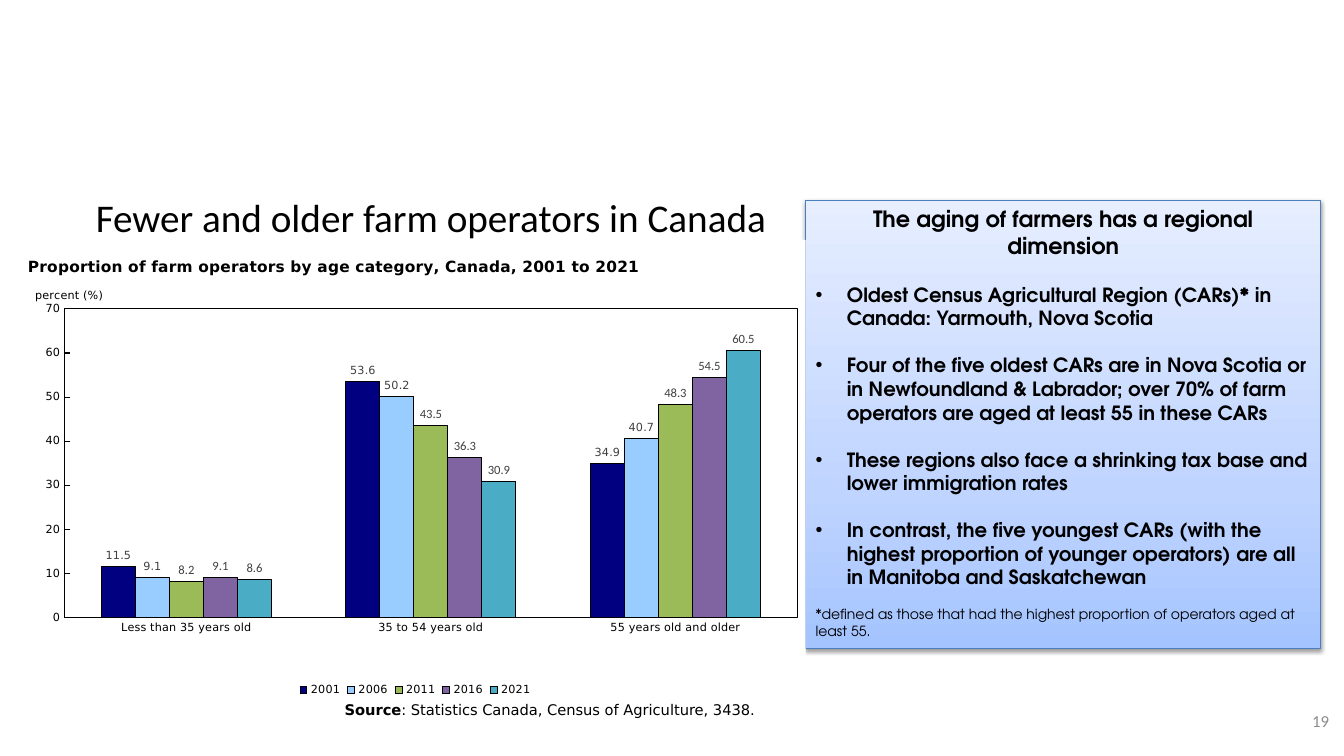
import copy
from dataclasses import dataclass

import pptx
import pptx.chart.data
import pptx.dml.color
import pptx.enum.chart
import pptx.enum.shapes
import pptx.enum.text
import pptx.oxml
import pptx.oxml.ns
import pptx.util

Inches = pptx.util.Inches
Pt = pptx.util.Pt
Align = pptx.enum.text.PP_ALIGN
Anchor = pptx.enum.text.MSO_ANCHOR
TickMark = pptx.enum.chart.XL_TICK_MARK
qn = pptx.oxml.ns.qn


@dataclass(frozen=True)
class Theme:
    text: str = "000000"
    label: str = "404040"
    number: str = "8C8C8C"
    white: str = "FFFFFF"
    panel_line: str = "4B7EBC"
    panel_stops: tuple = ((0, "A4C4FF"), (0.35, "BFD4FF"), (1, "E6EEFF"))
    body: str = "Calibri"
    chart: str = "DejaVu Sans"
    panel: str = "TeX Gyre Adventor"
    title_size: float = 28
    heading_size: float = 16
    bullet_size: float = 14
    number_size: float = 12
    chart_title_size: float = 11
    source_size: float = 10.5
    note_size: float = 10
    value_size: float = 9
    axis_size: float = 8
    line: float = 0.75


THEME = Theme()


@dataclass(frozen=True)
class Census:
    year: str
    shares: tuple
    color: str
    font: str
    size: float


AGES = ("Less than 35 years old", "35 to 54 years old", "55 years old and older")
CENSUSES = (
    Census("2001", (11.5, 53.6, 34.9), "000080", THEME.chart, THEME.axis_size),
    Census("2006", (9.1, 50.2, 40.7), "99CCFF", THEME.chart, THEME.axis_size),
    Census("2011", (8.2, 43.5, 48.3), "9BBB59", THEME.body, THEME.value_size),
    Census("2016", (9.1, 36.3, 54.5), "8064A2", THEME.body, THEME.value_size),
    Census("2021", (8.6, 30.9, 60.5), "4BACC6", THEME.body, THEME.value_size),
)
FINDINGS = (
    "Oldest Census Agricultural Region (CARs)* in Canada: Yarmouth, Nova Scotia",
    "Four of the five oldest CARs are in Nova Scotia or in Newfoundland & Labrador; "
    "over 70% of farm operators are aged at least 55 in these CARs",
    "These regions also face a shrinking tax base and lower immigration rates",
    "In contrast, the five youngest CARs (with the highest proportion of younger "
    "operators) are all in Manitoba and Saskatchewan",
)


def rgb(color: str):
    return pptx.dml.color.RGBColor.from_string(color)


def xml(markup: str):
    """Parse one element, declaring the drawing and chart namespaces."""
    head, rest = markup.split(">", 1)
    slash = "/" if head.endswith("/") else ""
    names = pptx.oxml.ns.nsdecls("a", "c")
    return pptx.oxml.parse_xml(f"{head.rstrip('/')} {names}{slash}>{rest}")


def style(font, size: float, name: str, color: str = THEME.text, bold: bool = False) -> None:
    font.size, font.name, font.bold = Pt(size), name, bold
    font.color.rgb = rgb(color)


def write(frame, text: str, *, size: float, font: str, color: str = THEME.text,
          bold: bool = False, align=Align.LEFT, before: float = 0,
          bullet: bool = False, join: bool = False) -> None:
    """Add a paragraph, or with join, a span of the last paragraph."""
    para = frame.paragraphs[-1]
    if para.runs and not join:
        para = frame.add_paragraph()
    if not join:
        para.alignment = align
        para.space_before = Pt(before)
    if bullet:
        props = para._p.get_or_add_pPr()
        props.set("marL", str(Inches(0.31)))
        props.set("indent", str(-Inches(0.31)))
        props.append(xml('<a:buFont typeface="Arial"/>'))
        props.append(xml('<a:buChar char="•"/>'))
    span = para.add_run()
    span.text = text
    style(span.font, size, font, color, bold)


def add_box(page, left: float, top: float, width: float, height: float, anchor=Anchor.TOP):
    box = page.shapes.add_textbox(Inches(left), Inches(top), Inches(width), Inches(height))
    box.text_frame.word_wrap = True
    box.text_frame.vertical_anchor = anchor
    return box.text_frame


def place(element, index: int, **edges: float) -> None:
    """Give a chart part a manual layout, in fractions of the chart."""
    old = element.find(qn("c:layout"))
    if old is not None:
        element.remove(old)
    target = '<c:layoutTarget val="inner"/>' if "w" in edges else ""
    modes = '<c:xMode val="edge"/><c:yMode val="edge"/>'
    sides = "".join(f'<c:{side} val="{value}"/>' for side, value in edges.items())
    element.insert(index, xml(
        f"<c:layout><c:manualLayout>{target}{modes}{sides}</c:manualLayout></c:layout>"))


def area_format(line: str):
    return xml(f'<c:spPr><a:solidFill><a:srgbClr val="{THEME.white}"/></a:solidFill>{line}</c:spPr>')


def add_title(page) -> None:
    title = page.shapes.title
    title.left, title.top = Inches(0.85), Inches(1.82)
    title.width, title.height = Inches(11.58), Inches(0.67)
    frame = title.text_frame
    frame.auto_size = pptx.enum.text.MSO_AUTO_SIZE.NONE
    frame.vertical_anchor = Anchor.MIDDLE
    write(frame, "Fewer and older farm operators in Canada",
          size=THEME.title_size, font=THEME.body)


def add_panel(page) -> None:
    panel = page.shapes.add_shape(pptx.enum.shapes.MSO_SHAPE.RECTANGLE, Inches(7.99),
                                  Inches(1.99), Inches(5.11), Inches(4.44))
    panel.line.color.rgb = rgb(THEME.panel_line)
    panel.line.width = Pt(THEME.line)

    # Three-stop gradient, lightest at the top
    panel.fill.gradient()
    panel.fill.gradient_angle = 90
    stops = panel._element.spPr.find(".//" + qn("a:gsLst"))
    stops.append(copy.deepcopy(stops[0]))
    for stop, (position, color) in zip(panel.fill.gradient_stops, THEME.panel_stops):
        stop.position = position
        stop.color.rgb = rgb(color)

    # Soft shadow below
    panel.shadow.inherit = False
    panel._element.spPr.find(qn("a:effectLst")).append(xml(
        f'<a:outerShdw blurRad="{Pt(3.1)}" dist="{Pt(1.6)}" dir="5400000" rotWithShape="0">'
        '<a:srgbClr val="000000"><a:alpha val="38000"/></a:srgbClr></a:outerShdw>'))

    # Heading, findings and footnote
    frame = panel.text_frame
    frame.word_wrap = True
    frame.vertical_anchor = Anchor.TOP
    write(frame, "The aging of farmers has a regional dimension", size=THEME.heading_size,
          font=THEME.panel, bold=True, align=Align.CENTER)
    for finding in FINDINGS:
        write(frame, finding, size=THEME.bullet_size, font=THEME.panel, bold=True,
              before=16.8, bullet=True)
    write(frame, "*defined as those that had the highest proportion of operators aged at least 55.",
          size=THEME.note_size, font=THEME.panel, before=12)


def add_age_chart(page) -> None:
    data = pptx.chart.data.CategoryChartData(number_format="0.0")
    data.categories = AGES
    for census in CENSUSES:
        data.add_series(census.year, census.shares)
    chart = page.shapes.add_chart(
        pptx.enum.chart.XL_CHART_TYPE.COLUMN_CLUSTERED, Inches(0.25), Inches(2.38),
        Inches(7.74), Inches(4.57), data).chart
    style(chart.font, THEME.note_size, THEME.body)

    # Title and legend
    write(chart.chart_title.text_frame,
          "Proportion of farm operators by age category, Canada, 2001 to 2021",
          size=THEME.chart_title_size, font=THEME.chart, bold=True)
    place(chart.chart_title._element, 1, x=0.0, y=0.03)
    chart.has_legend = True
    chart.legend.position = pptx.enum.chart.XL_LEGEND_POSITION.BOTTOM
    chart.legend.include_in_layout = False
    style(chart.legend.font, THEME.axis_size, THEME.chart)

    # Axes
    ages, percent = chart.category_axis, chart.value_axis
    for axis, tick in ((ages, TickMark.NONE), (percent, TickMark.INSIDE)):
        axis.has_major_gridlines = False
        axis.major_tick_mark, axis.minor_tick_mark = tick, TickMark.NONE
        style(axis.tick_labels.font, THEME.axis_size, THEME.chart)
    ages.format.line.fill.background()
    percent.format.line.color.rgb = rgb(THEME.text)
    percent.format.line.width = Pt(THEME.line)
    percent.minimum_scale, percent.maximum_scale, percent.major_unit = 0, 70, 10
    percent.tick_labels.number_format = "#,##0"
    percent.tick_labels.number_format_is_linked = False
    unit = percent.axis_title
    write(unit.text_frame, "percent (%)", size=THEME.axis_size, font=THEME.chart)
    unit.text_frame._txBody.bodyPr.set("rot", "0")
    place(unit._element, 1, x=0.01, y=0.1)

    # Columns
    plot = chart.plots[0]
    plot.gap_width, plot.overlap, plot.vary_by_categories = 219, 0, False
    for series, census in zip(plot.series, CENSUSES):
        series.format.fill.solid()
        series.format.fill.fore_color.rgb = rgb(census.color)
        series.format.line.color.rgb = rgb(THEME.text)
        series.format.line.width = Pt(THEME.line)
        labels = series.data_labels
        labels.show_value = True
        labels.position = pptx.enum.chart.XL_LABEL_POSITION.OUTSIDE_END
        style(labels.font, census.size, census.font, THEME.label)

    # Plot frame and chart background
    area = chart._chartSpace.chart.plotArea
    place(area, 0, x=0.05, y=0.15, w=0.94, h=0.67)
    area.append(area_format(f'<a:ln w="{Pt(THEME.line)}"><a:solidFill>'
                            f'<a:srgbClr val="{THEME.text}"/></a:solidFill></a:ln>'))
    chart._chartSpace.chart.addnext(area_format("<a:ln><a:noFill/></a:ln>"))


def main() -> None:
    deck = pptx.Presentation()
    deck.slide_width, deck.slide_height = Inches(13.33), Inches(7.5)
    page = deck.slides.add_slide(deck.slide_layouts.get_by_name("Title Only"))
    add_title(page)
    number = add_box(page, 10.17, 6.95, 3.11, 0.4, Anchor.MIDDLE)
    write(number, "19", size=THEME.number_size, font=THEME.body,
          color=THEME.number, align=Align.RIGHT)
    add_panel(page)
    add_age_chart(page)
    source = add_box(page, 3.32, 6.9, 6.67, 0.29)
    write(source, "Source", size=THEME.source_size, font=THEME.chart, bold=True)
    write(source, ": Statistics Canada, Census of Agriculture, 3438.",
          size=THEME.source_size, font=THEME.chart, join=True)
    deck.save("out.pptx")


if __name__ == "__main__":
    main()
